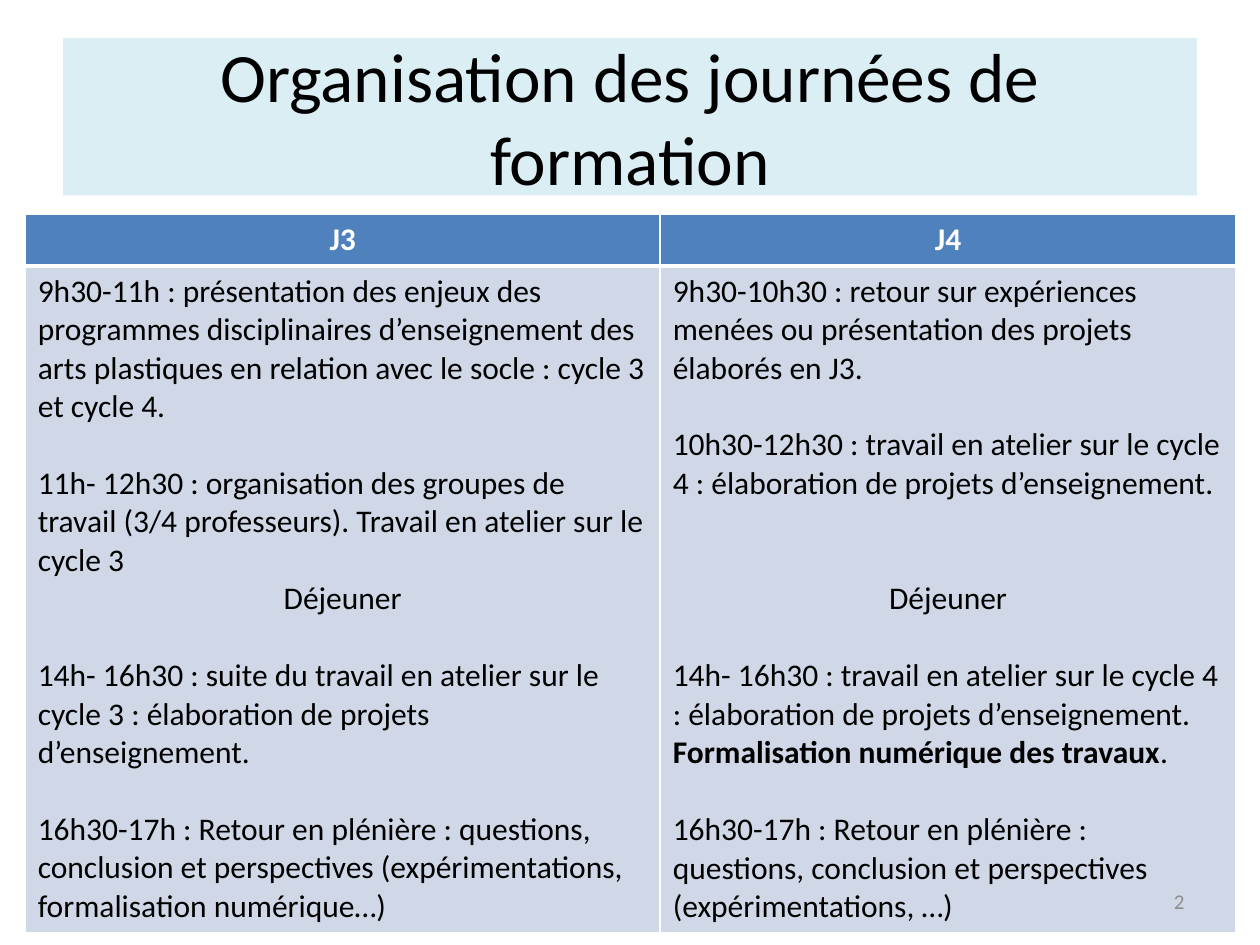
from pptx import Presentation
from pptx.dml.color import RGBColor
from pptx.enum.text import MSO_ANCHOR, MSO_AUTO_SIZE, PP_ALIGN
from pptx.oxml import parse_xml
from pptx.oxml.ns import nsdecls
from pptx.util import Inches, Pt

LEFT, CENTER, RIGHT = PP_ALIGN.LEFT, PP_ALIGN.CENTER, PP_ALIGN.RIGHT
MIDDLE = MSO_ANCHOR.MIDDLE
NO_AUTOFIT = MSO_AUTO_SIZE.NONE
TITLE_ONLY = 5

TITLE = "Organisation des journées de formation"
PAGE_NUMBER = "2"
LUNCH = "Déjeuner"

# Each day: (lines of space before, text, bold opening words)
DAYS = {
    "J3": [
        (0, "9h30-11h : présentation des enjeux des programmes disciplinaires "
            "d’enseignement des arts plastiques en relation avec le socle : "
            "cycle 3 et cycle 4.", ""),
        (1, "11h- 12h30 : organisation des groupes de travail (3/4 professeurs). "
            "Travail en atelier sur le cycle 3", ""),
        (0, LUNCH, ""),
        (1, "14h- 16h30 : suite du travail en atelier sur le cycle 3 : "
            "élaboration de projets d’enseignement.", ""),
        (1, "16h30-17h : Retour en plénière : questions, conclusion et "
            "perspectives (expérimentations, formalisation numérique…)", ""),
    ],
    "J4": [
        (0, "9h30-10h30 : retour sur expériences menées ou présentation des "
            "projets élaborés en J3.", ""),
        (1, "10h30-12h30 : travail en atelier sur le cycle 4 : élaboration de "
            "projets d’enseignement.", ""),
        (2, LUNCH, ""),
        (1, "14h- 16h30 : travail en atelier sur le cycle 4 : élaboration de "
            "projets d’enseignement.", ""),
        (0, ".", "Formalisation numérique des travaux"),
        (1, "16h30-17h : Retour en plénière : questions, conclusion et "
            "perspectives (expérimentations, …)", ""),
    ],
}

THEME = {
    "font": "Calibri",
    "title_size": 39.6, "table_size": 18, "page_size": 12, "line_height": 22,
    "ink": "000000", "white": "FFFFFF", "grey": "8C8C8C",
    "title_fill": "DBEEF4", "header_fill": "4F81BD", "body_fill": "D0D8E8",
}
TITLE_BOX = (0.5, 0.3, 9, 1.25)
PAGE_BOX = (7.17, 6.95, 2.33, 0.4)
TABLE_ORIGIN = (0.2, 1.7)
COLUMN_WIDTHS = (5.04, 4.57)
ROW_HEIGHTS = (0.41, 5.2)


def inches(values):
    return [Inches(value) for value in values]


def paint(fill, color):
    fill.solid()
    fill.fore_color.rgb = RGBColor.from_string(THEME[color])


def style(paragraph, size, color, align):
    paragraph.alignment = align
    for run in paragraph.runs:
        run.font.name = THEME["font"]
        run.font.size = Pt(THEME[size])
        run.font.color.rgb = RGBColor.from_string(THEME[color])


def draw_borders(cell, bottom=1, top=1):
    """Outline a cell in white; widths are in points."""
    properties = cell._tc.get_or_add_tcPr()
    widths = {"lnL": 1, "lnR": 1, "lnT": top, "lnB": bottom}
    for position, (side, width) in enumerate(widths.items()):
        properties.insert(position, parse_xml(
            f'<a:{side} {nsdecls("a")} w="{Pt(width)}"><a:solidFill>'
            f'<a:srgbClr val="{THEME["white"]}"/></a:solidFill></a:{side}>'))


def fill_schedule(frame, sessions):
    for index, (gap, text, bold_opening) in enumerate(sessions):
        paragraph = frame.add_paragraph() if index else frame.paragraphs[0]
        paragraph.space_before = Pt(gap * THEME["line_height"])
        if bold_opening:
            opening = paragraph.add_run()
            opening.text = bold_opening
            opening.font.bold = True
        session = paragraph.add_run()
        session.text = text
        session.font.bold = False
        style(paragraph, "table_size", "ink", CENTER if text == LUNCH else LEFT)


def add_title(slide):
    title = slide.shapes.title
    title.left, title.top, title.width, title.height = inches(TITLE_BOX)
    paint(title.fill, "title_fill")
    frame = title.text_frame
    frame.text = TITLE
    frame.auto_size = NO_AUTOFIT
    frame.vertical_anchor = MIDDLE
    style(frame.paragraphs[0], "title_size", "ink", CENTER)


def add_timetable(slide):
    size = (sum(COLUMN_WIDTHS), sum(ROW_HEIGHTS))
    table = slide.shapes.add_table(
        len(ROW_HEIGHTS), len(DAYS), *inches(TABLE_ORIGIN + size)).table
    for row, height in zip(table.rows, ROW_HEIGHTS):
        row.height = Inches(height)
    for index, (day, sessions) in enumerate(DAYS.items()):
        table.columns[index].width = Inches(COLUMN_WIDTHS[index])
        header, body = table.cell(0, index), table.cell(1, index)
        header.text_frame.text = day
        heading = header.text_frame.paragraphs[0]
        style(heading, "table_size", "white", CENTER)
        heading.runs[0].font.bold = True
        paint(header.fill, "header_fill")
        draw_borders(header, bottom=3)
        fill_schedule(body.text_frame, sessions)
        paint(body.fill, "body_fill")
        draw_borders(body, top=3)


def add_page_number(slide):
    frame = slide.shapes.add_textbox(*inches(PAGE_BOX)).text_frame
    frame.text = PAGE_NUMBER
    frame.word_wrap = True
    frame.vertical_anchor = MIDDLE
    style(frame.paragraphs[0], "page_size", "grey", RIGHT)


def main():
    presentation = Presentation()
    presentation.slide_width, presentation.slide_height = inches((10, 7.5))
    slide = presentation.slides.add_slide(presentation.slide_layouts[TITLE_ONLY])
    add_title(slide)
    add_timetable(slide)
    add_page_number(slide)
    presentation.save("out.pptx")


if __name__ == "__main__":
    main()
